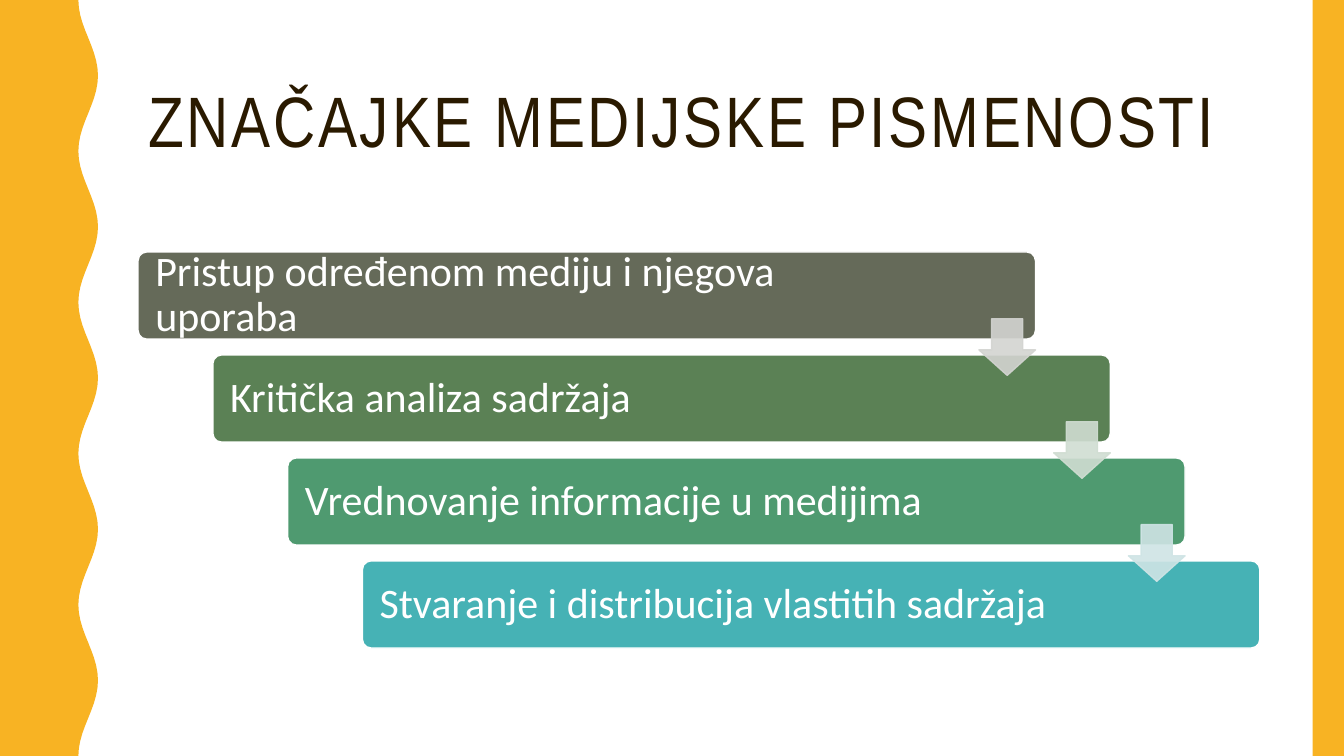
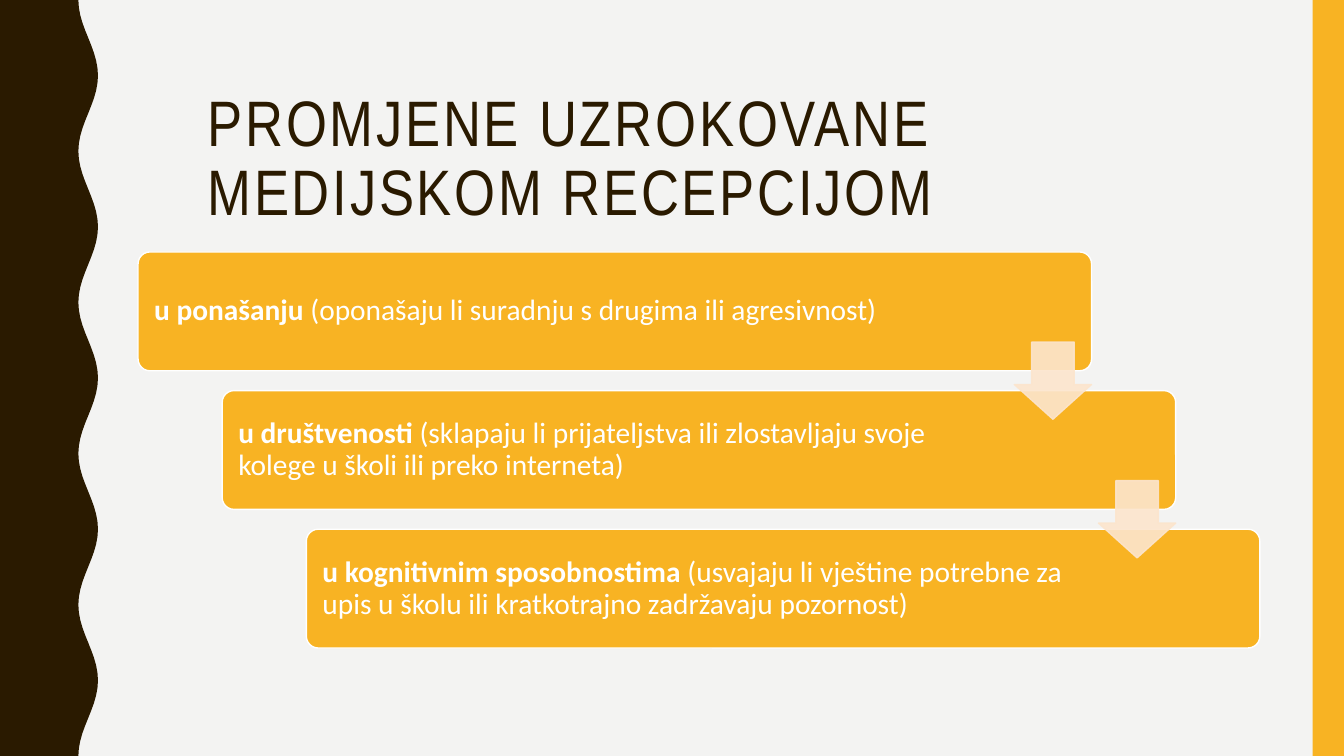
import math
from dataclasses import dataclass

from pptx import Presentation, util as u
from pptx.dml.color import RGBColor
from pptx.enum import shapes, text
from pptx.oxml import parse_xml
from pptx.oxml.ns import nsdecls, qn


@dataclass(frozen=True)
class Theme:
    gold: str = "F8B323"
    brown: str = "2A1A00"
    white: str = "FFFFFF"
    mist: str = "F3F3F2"
    peach: str = "FCE5CD"
    steps: tuple = ("656A59", "5B8155", "4F9A70", "46B2B5")
    step_arrows: tuple = ("D3D4D1", "D0DDD2", "CFE4E5")
    title_font: str = "Arial Narrow"
    body_font: str = "Calibri"
    title_size: float = 51
    long_title_size: float = 45.9
    step_size: float = 30
    detail_size: float = 21


@dataclass(frozen=True)
class Box:
    left: float
    top: float
    width: float
    height: float

    def lengths(self):
        return [u.Cm(n) for n in (self.left, self.top, self.width, self.height)]


THEME = Theme()
PAGE = Box(0, 0, 33.87, 19.05)
STAIRS = Box(3.48, 6.35, 28.27, 9.98)
SHAPE = shapes.MSO_SHAPE


def paint(shape, fill, line=None):
    """Give a shape a plain fill and, if wanted, a thin outline."""
    shape.shadow.inherit = False
    shape.fill.solid()
    shape.fill.fore_color.rgb = RGBColor.from_string(fill)
    if line:
        shape.line.color.rgb = RGBColor.from_string(line)
        shape.line.width = u.Pt(1)
    else:
        shape.line.fill.background()


def add_span(para, words, *, font, size, color, bold=False, spacing=0):
    span = para.add_run()
    span.text = words
    span.font.name = font
    span.font.size = u.Pt(size)
    span.font.bold = bold
    span.font.color.rgb = RGBColor.from_string(color)
    if spacing:
        span._r.get_or_add_rPr().set("spc", str(spacing * 100))


def set_frame(frame, anchor, left, top, right, bottom):
    """Prepare a text frame and return its left-aligned first paragraph."""
    frame.word_wrap = True
    frame.auto_size = text.MSO_AUTO_SIZE.NONE
    frame.vertical_anchor = anchor
    frame.margin_left, frame.margin_top = u.Cm(left), u.Cm(top)
    frame.margin_right, frame.margin_bottom = u.Cm(right), u.Cm(bottom)
    para = frame.paragraphs[0]
    para.alignment = text.PP_ALIGN.LEFT
    para.line_spacing = 0.9
    return para


def add_wave(slide, box, color, waves=5, points=20):
    """Side band whose right edge swings between 80 % and 100 % of its width."""
    edge = []
    for i in range(waves * points + 1):
        swing = (1 - math.cos(2 * math.pi * i / points)) / 2
        x = box.left + box.width * (0.8 + 0.2 * swing)
        y = box.top + box.height * i / (waves * points)
        edge.append((u.Cm(x), u.Cm(y)))
    builder = slide.shapes.build_freeform(u.Cm(box.left), u.Cm(box.top))
    builder.add_line_segments(edge + [(u.Cm(box.left), u.Cm(box.top + box.height))])
    paint(builder.convert_to_shape(), color)


def add_page(deck, background, wave_color):
    """Slide with the shared background and side bands."""
    slide = deck.slides.add_slide(deck.slide_layouts[5])
    slide.background.fill.solid()
    slide.background.fill.fore_color.rgb = RGBColor.from_string(background)
    add_wave(slide, Box(0, 0, 2.47, PAGE.height), wave_color)
    band = Box(PAGE.width - 0.79, 0, 0.79, PAGE.height)
    paint(slide.shapes.add_shape(SHAPE.RECTANGLE, *band.lengths()), THEME.gold)
    return slide


def add_title(slide, box, words, size, anchor):
    title = slide.shapes.title
    title.left, title.top, title.width, title.height = box.lengths()
    para = set_frame(title.text_frame, anchor, 0.25, 0.13, 0.25, 0.13)
    add_span(para, words, font=THEME.title_font, size=size,
             color=THEME.brown, spacing=2)


def add_arrow(slide, box, color):
    arrow = slide.shapes.add_shape(SHAPE.DOWN_ARROW, *box.lengths())
    arrow.adjustments[0], arrow.adjustments[1] = 0.55, 0.45
    paint(arrow, color, color)
    # Fill and outline are slightly see-through
    for tint in arrow._element.spPr.iter(qn("a:srgbClr")):
        tint.append(parse_xml(f'<a:alpha {nsdecls("a")} val="90000"/>'))


def add_stairs(slide, box, steps, colors, arrow_colors, *,
               bar_width, bar_height, size, pad):
    """Descending bars joined by arrows; bar sizes are shares of the box."""
    width, height = box.width * bar_width, box.height * bar_height
    gaps = len(steps) - 1
    shift, drop = (box.width - width) / gaps, (box.height - height) / gaps
    side = height * 0.65

    # Bars
    for i, (spans, color) in enumerate(zip(steps, colors)):
        place = Box(box.left + i * shift, box.top + i * drop, width, height)
        bar = slide.shapes.add_shape(SHAPE.ROUNDED_RECTANGLE, *place.lengths())
        bar.adjustments[0] = 0.1
        paint(bar, color, THEME.white)
        para = set_frame(bar.text_frame, text.MSO_ANCHOR.MIDDLE,
                         pad, 0, side + 2.4, 0)
        for words, bold in spans:
            add_span(para, words, font=THEME.body_font, size=size,
                     color=THEME.white, bold=bold)

    # Arrows, centred on the gaps and flush with the upper bar's right end
    for i, color in enumerate(arrow_colors):
        right = box.left + i * shift + width
        middle = box.top + i * drop + (height + drop) / 2
        add_arrow(slide, Box(right - side, middle - side / 2, side, side), color)


def add_features_slide(deck):
    slide = add_page(deck, THEME.white, THEME.gold)
    add_title(slide, Box(3.48, 1.07, 28.27, 4.14), "ZNAČAJKE MEDIJSKE PISMENOSTI",
              THEME.title_size, text.MSO_ANCHOR.MIDDLE)
    features = [
        "Pristup određenom mediju i njegova uporaba",
        "Kritička analiza sadržaja",
        "Vrednovanje informacije u medijima",
        "Stvaranje i distribucija vlastitih sadržaja",
    ]
    add_stairs(slide, STAIRS, [[(feature, False)] for feature in features],
               THEME.steps, THEME.step_arrows, bar_width=0.8, bar_height=0.22,
               size=THEME.step_size, pad=0.37)


def add_changes_slide(deck):
    slide = add_page(deck, THEME.mist, THEME.brown)
    add_title(slide, Box(4.98, 2.16, 23.93, 3.58),
              "PROMJENE UZROKOVANE MEDIJSKOM RECEPCIJOM",
              THEME.long_title_size, text.MSO_ANCHOR.TOP)
    changes = [
        ("u ponašanju", " (oponašaju li suradnju s drugima ili agresivnost)"),
        ("u društvenosti", " (sklapaju li prijateljstva ili zlostavljaju svoje "
                           "kolege u školi ili preko interneta)"),
        ("u kognitivnim sposobnostima", " (usvajaju li vještine potrebne za upis "
                                        "u školu ili kratkotrajno zadržavaju pozornost)"),
    ]
    add_stairs(slide, STAIRS, [[(area, True), (detail, False)] for area, detail in changes],
               [THEME.gold] * 3, [THEME.peach] * 2, bar_width=0.85, bar_height=0.3,
               size=THEME.detail_size, pad=0.32)


def main():
    deck = Presentation()
    deck.slide_width, deck.slide_height = u.Cm(PAGE.width), u.Cm(PAGE.height)
    add_features_slide(deck)
    add_changes_slide(deck)
    deck.save("out.pptx")


if __name__ == "__main__":
    main()
